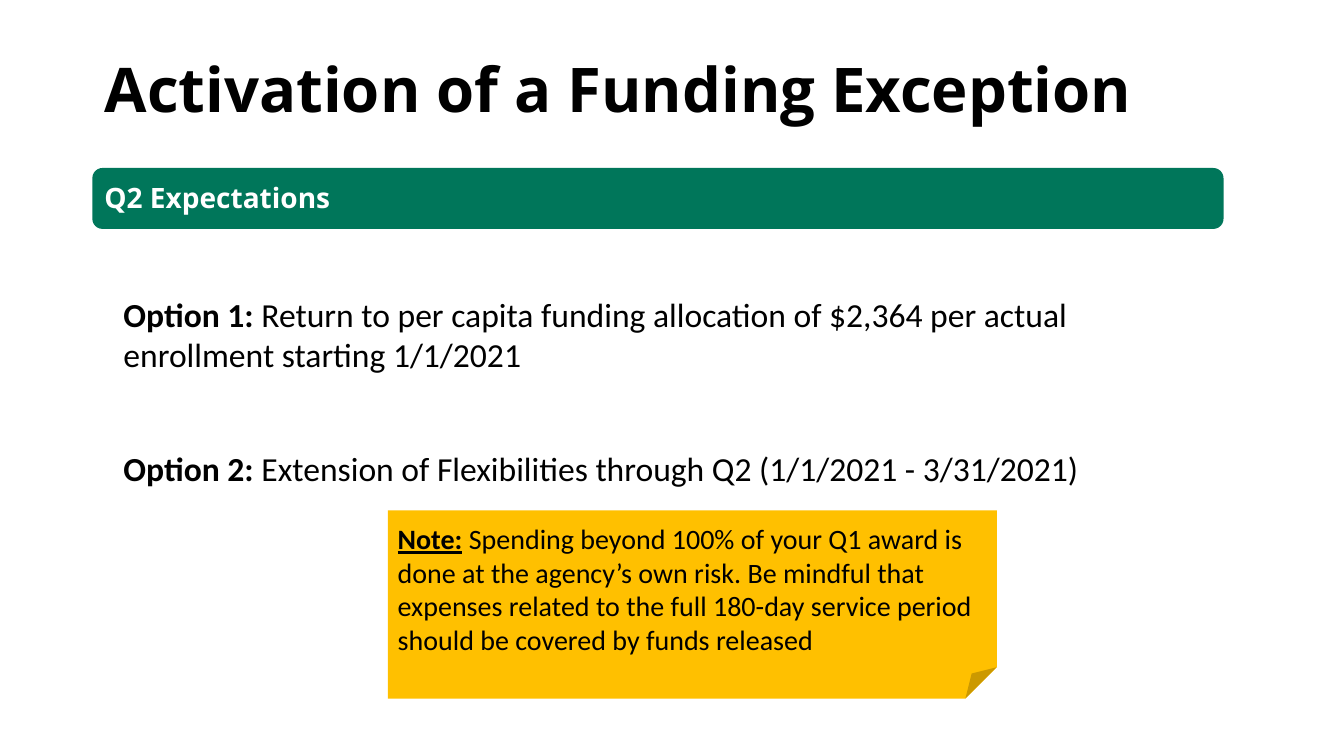
from pptx import Presentation
from pptx.dml.color import RGBColor
from pptx.enum.shapes import MSO_SHAPE as Shape
from pptx.enum.text import MSO_ANCHOR as Anchor, MSO_AUTO_SIZE as AutoSize, PP_ALIGN as Align
from pptx.oxml.ns import qn
from pptx.util import Pt

GREEN = RGBColor(0x00, 0x76, 0x5A)
AMBER = RGBColor(0xFF, 0xC0, 0x00)
BLACK = RGBColor(0x00, 0x00, 0x00)
WHITE = RGBColor(0xFF, 0xFF, 0xFF)
HEADING_FONT = "Open Sans"
BODY_FONT = "Calibri"

OPTIONS = [
    ("Option 1:", " Return to per capita funding allocation of $2,364 per actual "
                  "enrollment starting 1/1/2021"),
    ("Option 2:", " Extension of Flexibilities through Q2 (1/1/2021 - 3/31/2021)"),
]
NOTE = ("Note:", " Spending beyond 100% of your Q1 award is done at the agency’s own risk. "
                 "Be mindful that expenses related to the full 180-day service period "
                 "should be covered by funds released")


def place(shape, box):
    """Move a shape to a box of left, top, width and height in points."""
    shape.left, shape.top, shape.width, shape.height = map(Pt, box)


def prepare_frame(text_frame, anchor=Anchor.TOP):
    """Give a text frame wrapping, fixed size, even margins and an anchor."""
    text_frame.word_wrap = True
    text_frame.auto_size = AutoSize.NONE
    text_frame.margin_left = text_frame.margin_right = Pt(7.2)
    text_frame.margin_top = text_frame.margin_bottom = Pt(3.6)
    text_frame.vertical_anchor = anchor


def style_run(run, font_name, size, color, bold):
    """Set the font of one run."""
    font = run.font
    font.name, font.size, font.bold = font_name, Pt(size), bold
    font.color.rgb = color


def write_heading(text_frame, text, size, color):
    """Write one bold, left-aligned heading line."""
    prepare_frame(text_frame)
    text_frame.text = text
    paragraph = text_frame.paragraphs[0]
    paragraph.alignment = Align.LEFT
    style_run(paragraph.runs[0], HEADING_FONT, size, color, True)


def write_labelled(paragraph, label, text, size, space_after):
    """Write a bold label followed by plain text."""
    paragraph.text = label
    paragraph.add_run().text = text
    paragraph.alignment = Align.LEFT
    paragraph.space_before, paragraph.space_after = Pt(0), Pt(space_after)
    for run, bold in zip(paragraph.runs, (True, False)):
        style_run(run, BODY_FONT, size, BLACK, bold)


def add_filled_shape(slide, kind, box, color):
    """Add a flat preset shape without outline."""
    shape = slide.shapes.add_shape(kind, *map(Pt, box))
    shape.shadow.inherit = False
    shape.fill.solid()
    shape.fill.fore_color.rgb = color
    shape.line.fill.background()
    return shape


def build_title(slide, box):
    """Fill the title placeholder."""
    title = slide.shapes.title
    place(title, box)
    write_heading(title.text_frame, "Activation of a Funding Exception", 44, BLACK)


def build_banner(slide, box):
    """Draw the green bar with its section heading."""
    left, top, width, height = box
    add_filled_shape(slide, Shape.ROUNDED_RECTANGLE, box, GREEN)
    label_box = (left + 1.5, top + 5.5, width - 9, height - 11)
    label = slide.shapes.add_textbox(*map(Pt, label_box))
    write_heading(label.text_frame, "Q2 Expectations", 20, WHITE)


def build_options(slide, box):
    """Fill the body placeholder with the unbulleted options."""
    body = slide.placeholders[1]
    place(body, box)
    text_frame = body.text_frame
    prepare_frame(text_frame)
    text_frame.text = "\n".join(label for label, _ in OPTIONS)
    for paragraph, (label, text) in zip(text_frame.paragraphs, OPTIONS):
        write_labelled(paragraph, label, text, 24, 53)
        properties = paragraph._p.get_or_add_pPr()
        properties.set("marL", "0")
        properties.set("indent", "0")
        properties.append(properties.makeelement(qn("a:buNone"), {}))


def build_note(slide, box):
    """Draw the folded note with its underlined label."""
    note = add_filled_shape(slide, Shape.FOLDED_CORNER, box, AMBER)
    prepare_frame(note.text_frame, Anchor.MIDDLE)
    paragraph = note.text_frame.paragraphs[0]
    write_labelled(paragraph, *NOTE, 20, 12)
    paragraph.runs[0].font.underline = True


def main():
    """Build and save the slide."""
    presentation = Presentation()
    presentation.slide_width, presentation.slide_height = Pt(960), Pt(540)
    slide = presentation.slides.add_slide(presentation.slide_layouts[1])
    build_title(slide, (67.5, 32.5, 762, 60.5))
    build_banner(slide, (66, 120, 808, 43.5))
    build_options(slide, (81, 206, 773, 148))
    build_note(slide, (277, 364.5, 435, 134.5))
    presentation.save("out.pptx")


if __name__ == "__main__":
    main()
